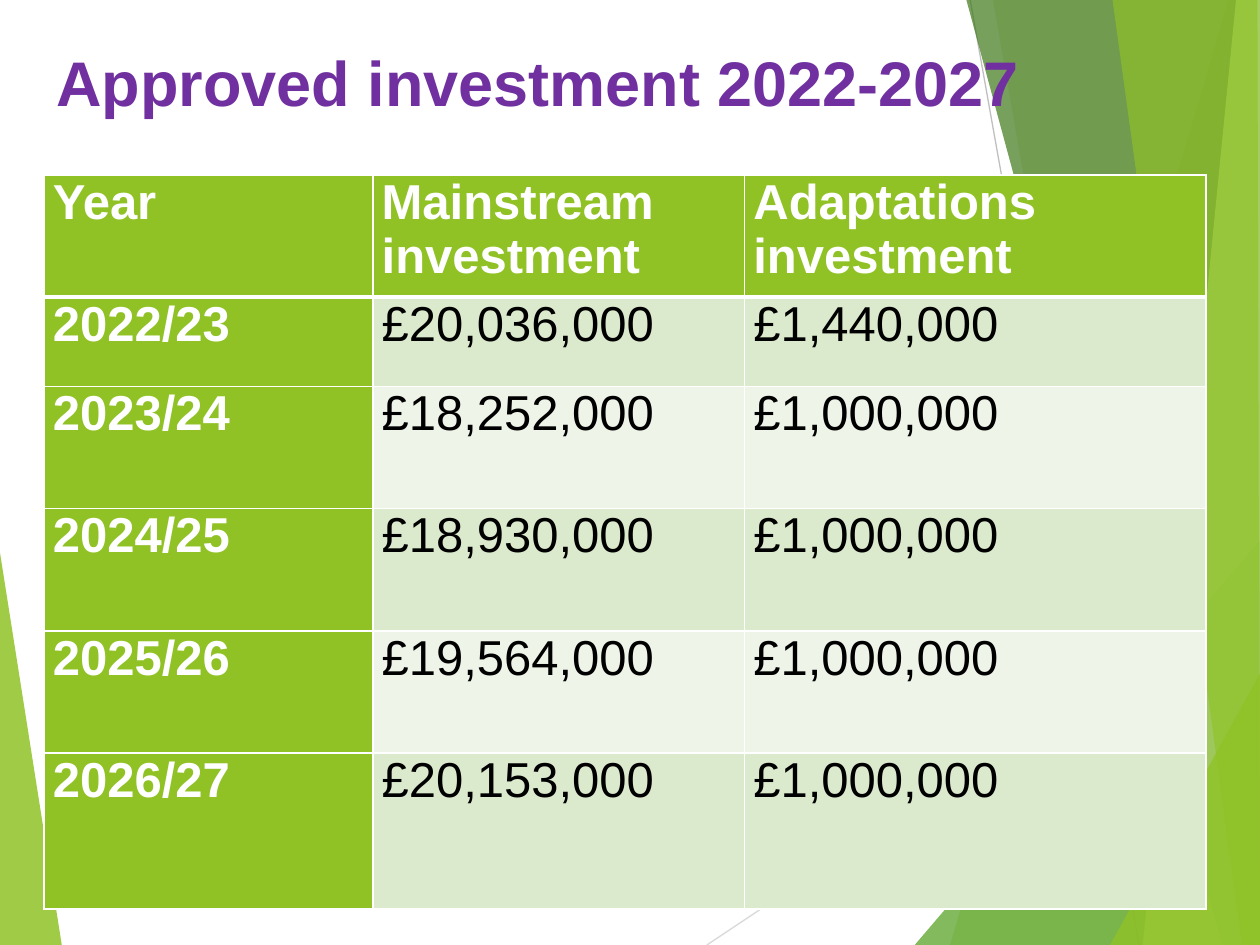
from lxml.etree import SubElement
from pptx import Presentation
from pptx.dml.color import RGBColor as RGB
from pptx.enum.shapes import MSO_CONNECTOR as CONN
from pptx.oxml import parse_xml
from pptx.oxml.ns import nsdecls, qn
from pptx.util import Inches, Pt

GREEN, WHITE, BLACK, PURPLE = "90C226", "FFFFFF", "000000", "7030A0"

prs = Presentation()
prs.slide_width, prs.slide_height = Inches(10), Inches(7.5)
W, H = prs.slide_width, prs.slide_height
s = prs.slides.add_slide(prs.slide_layouts[6])


def paint(fmt, color, alpha=100):
    fmt.solid()
    fmt.fore_color.rgb = RGB.from_string(color)
    if alpha < 100:
        clr = fmt._xPr.find(qn("a:solidFill"))[0]
        SubElement(clr, qn("a:alpha")).set("val", str(alpha * 1000))


def style(p, size, color, bold):
    for r in p.runs:
        r.font.name, r.font.size, r.font.bold = "Arial", Pt(size), bold
        r.font.color.rgb = RGB.from_string(color)


facets = [
    (GREEN, 85, [(0, 58.5), (4.9, 100), (0, 100)]),
    ("D9D9D9", 100, [(56.1, 100), (100, 61)]),
    ("BFBFBF", 100, [(77, 0), (90.4, 100)]),
    (GREEN, 30, [(97.5, 0), (75.4, 100), (100, 100), (100, 0)]),
    (GREEN, 20, [(78.8, 0), (91.9, 100), (100, 100), (100, 0)]),
    ("54A021", 72, [(72.6, 100), (100, 57.2), (100, 100)]),
    ("3F7819", 70, [(76.7, 0), (97, 100), (100, 100), (100, 0)]),
    ("C0E474", 70, [(98.1, 0), (90.7, 100), (100, 100), (100, 0)]),
    (GREEN, 65, [(88.3, 0), (98.6, 100), (100, 100), (99.8, 0)]),
    (GREEN, 80, [(88.1, 100), (100, 71.3), (100, 100)]),
]
for color, alpha, shares in facets:
    pts = [(int(W * x / 100), int(H * y / 100)) for x, y in shares]
    if len(pts) == 2:
        sp = s.shapes.add_connector(CONN.STRAIGHT, *pts[0], *pts[1])
        paint(sp.line.fill, color)
        sp.line.width = Pt(0.75)
        SubElement(sp._element.spPr, qn("a:effectLst"))
    else:
        fb = s.shapes.build_freeform(*pts[0])
        fb.add_line_segments(pts[1:], close=True)
        sp = fb.convert_to_shape()
        paint(sp.fill, color, alpha)
        sp.line.fill.background()
        sp.shadow.inherit = False

left = int(W * 0.035)
tf = s.shapes.add_textbox(left, int(H * 0.039), int(W * 0.82), int(H * 0.244)).text_frame
tf.word_wrap = True
tf.text = "Approved investment 2022-2027"
style(tf.paragraphs[0], 36, PURPLE, True)

rows = [
    ("Year", "Mainstream investment", "Adaptations\ninvestment"),
    ("2022/23", "£20,036,000", "£1,440,000"),
    ("2023/24", "£18,252,000", "£1,000,000"),
    ("2024/25", "£18,930,000", "£1,000,000"),
    ("2025/26", "£19,564,000", "£1,000,000"),
    ("2026/27", "£20,153,000", "£1,000,000"),
]
col_widths = [2.61, 2.95, 3.66]
row_heights = [0.97, 0.71, 0.97, 0.97, 0.97, 1.24]
table = s.shapes.add_table(len(rows), len(col_widths), left, int(H * 0.185),
                           Inches(sum(col_widths)), Inches(sum(row_heights))).table
for col, width in zip(table.columns, col_widths):
    col.width = Inches(width)
for row, height in zip(table.rows, row_heights):
    row.height = Inches(height)

for i, row in enumerate(rows):
    for j, text in enumerate(row):
        cell = table.cell(i, j)
        head = i == 0 or j == 0
        cell.margin_left = cell.margin_right = Inches(0.07)
        cell.margin_top = cell.margin_bottom = 0
        paint(cell.fill, GREEN if head else "DBE9CD" if i % 2 else "EEF4E8")
        cell.text_frame.text = text
        for p in cell.text_frame.paragraphs:
            style(p, 28, WHITE if head else BLACK, head)
        widths = {"L": 1, "R": 1, "T": 3 if i == 1 else 1, "B": 3 if i == 0 else 1}
        for k, (side, width) in enumerate(widths.items()):
            cell._tc.tcPr.insert(k, parse_xml(
                f'<a:ln{side} {nsdecls("a")} w="{Pt(width)}"><a:solidFill>'
                f'<a:srgbClr val="{WHITE}"/></a:solidFill></a:ln{side}>'))

prs.save("out.pptx")
